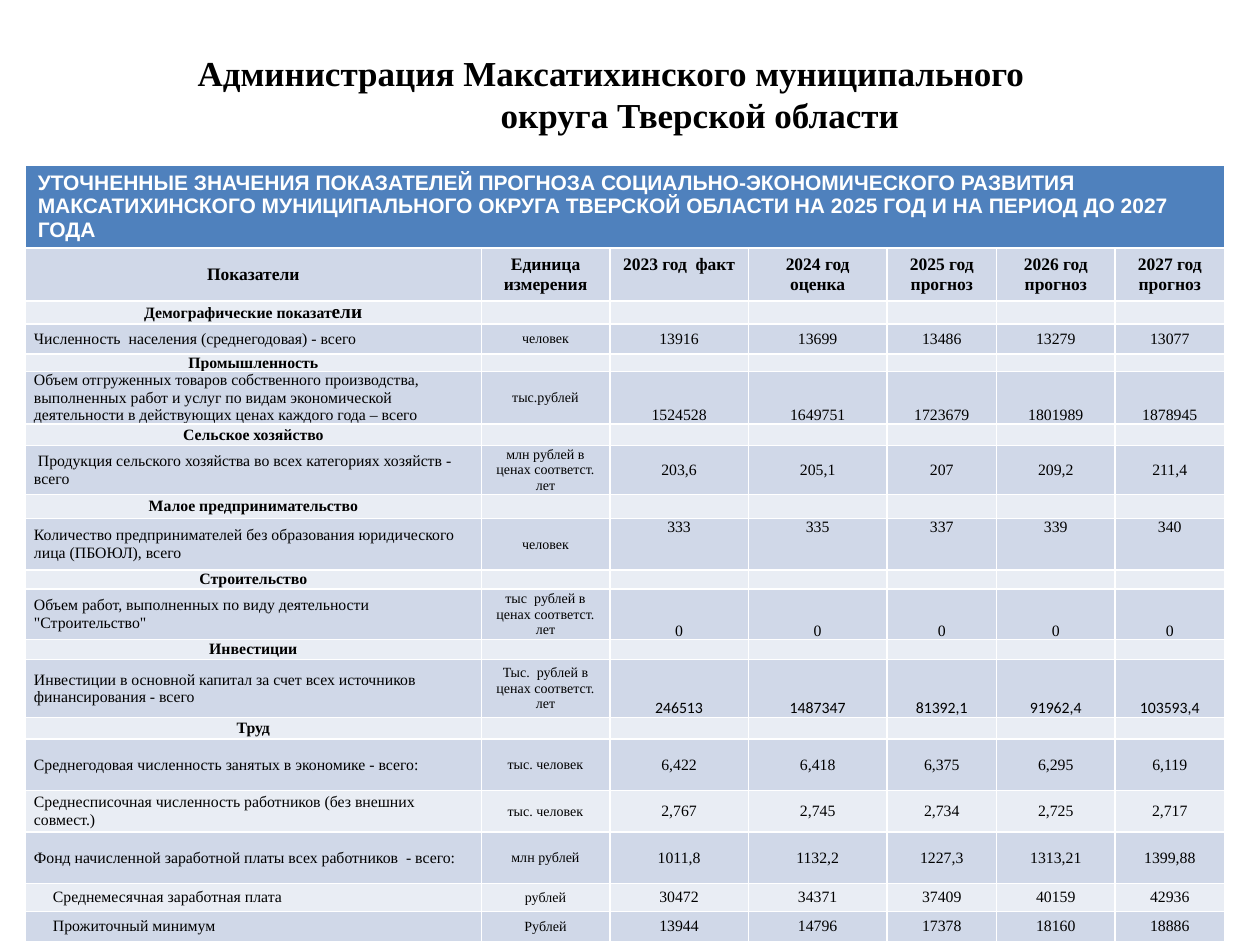
import pptx
import pptx.dml.color
import pptx.enum.text
import pptx.oxml.ns
import pptx.util
from lxml import etree

Inches = pptx.util.Inches
RGBColor = pptx.dml.color.RGBColor
ALIGN = pptx.enum.text.PP_ALIGN
ANCHOR = pptx.enum.text.MSO_ANCHOR

BLACK = RGBColor(0x00, 0x00, 0x00)
WHITE = RGBColor(0xFF, 0xFF, 0xFF)
HEADING_BLUE = RGBColor(0x4F, 0x81, 0xBD)
BAND_DARK = RGBColor(0xD0, 0xD8, 0xE8)
BAND_LIGHT = RGBColor(0xE9, 0xED, 0xF4)
SERIF = "Times New Roman"

COLUMN_WIDTHS = [3.62, 1.02, 1.1, 1.1, 0.87, 0.94, 0.87]
TABLE_HEADING = (
    "УТОЧНЕННЫЕ ЗНАЧЕНИЯ ПОКАЗАТЕЛЕЙ ПРОГНОЗА СОЦИАЛЬНО-ЭКОНОМИЧЕСКОГО РАЗВИТИЯ "
    "МАКСАТИХИНСКОГО МУНИЦИПАЛЬНОГО ОКРУГА ТВЕРСКОЙ ОБЛАСТИ НА 2025 ГОД И НА ПЕРИОД ДО 2027 ГОДА"
)
COLUMN_NAMES = [
    "Показатели", "Единица измерения", "2023 год  факт", "2024 год оценка",
    "2025 год прогноз", "2026 год прогноз", "2027 год прогноз",
]
HEADING_HEIGHT = 0.41
COLUMN_NAMES_HEIGHT = 0.42

# SECTION rows hold a height and a name; the others add unit, values and format.
ROWS = [
    (0.18, "Демографические показатели"),
    (0.24, "Численность  населения (среднегодовая) - всего", "человек",
     "13916 13699 13486 13279 13077", {}),
    (0.14, "Промышленность"),
    (0.41, "Объем отгруженных товаров собственного производства, выполненных работ и услуг "
     "по видам экономической деятельности в действующих ценах каждого года – всего", "тыс.рублей",
     "1524528 1649751 1723679 1801989 1878945", {"anchor": ANCHOR.BOTTOM}),
    (0.17, "Сельское хозяйство"),
    (0.39, " Продукция сельского хозяйства во всех категориях хозяйств - всего",
     "млн рублей в ценах соответст. лет", "203,6 205,1 207 209,2 211,4", {}),
    (0.19, "Малое предпринимательство"),
    (0.41, "Количество предпринимателей без образования юридического лица (ПБОЮЛ), всего",
     "человек", "333 335 337 339 340", {"anchor": ANCHOR.TOP}),
    (0.15, "Строительство"),
    (0.4, "Объем работ, выполненных по виду деятельности \"Строительство\"",
     "тыс  рублей в ценах соответст. лет", "0 0 0 0 0", {"anchor": ANCHOR.BOTTOM}),
    (0.16, "Инвестиции"),
    (0.46, "Инвестиции в основной капитал за счет всех источников финансирования - всего",
     "Тыс.  рублей в ценах соответст. лет", "246513 1487347 81392,1 91962,4 103593,4",
     {"anchor": ANCHOR.BOTTOM, "font": "Calibri"}),
    (0.17, "Труд"),
    (0.41, "Среднегодовая численность занятых в экономике - всего:", "тыс. человек",
     "6,422 6,418 6,375 6,295 6,119", {}),
    (0.33, "Среднесписочная численность работников (без внешних совмест.)", "тыс. человек",
     "2,767 2,745 2,734 2,725 2,717", {}),
    (0.41, "Фонд начисленной заработной платы всех работников  - всего:", "млн рублей",
     "1011,8 1132,2 1227,3 1313,21 1399,88", {}),
    (0.22, "Среднемесячная заработная плата", "рублей",
     "30472 34371 37409 40159 42936", {"indent": 0.15}),
    (0.24, "Прожиточный минимум", "Рублей",
     "13944 14796 17378 18160 18886", {"indent": 0.15}),
]


def write_text(paragraph, text, size=9, font=SERIF, color=BLACK, bold=False, align=ALIGN.CENTER):
    """Add a formatted run to a paragraph."""
    paragraph.alignment = align
    run = paragraph.add_run()
    run.text = text
    run.font.size = pptx.util.Pt(size)
    run.font.name = font
    run.font.bold = bold
    run.font.color.rgb = color


def paint_cell(cell, color):
    """Fill a cell with one colour."""
    cell.fill.solid()
    cell.fill.fore_color.rgb = color


def fill_cell(cell, text, anchor=ANCHOR.MIDDLE, indent=0, **text_format):
    """Write a body cell with narrow margins."""
    cell.margin_left = Inches(0.07 + indent)
    cell.margin_right = Inches(0.07)
    cell.margin_top = cell.margin_bottom = 0
    cell.vertical_anchor = anchor
    write_text(cell.text_frame.paragraphs[0], text, **text_format)


def shrink_empty_cell(cell):
    """Keep an empty cell from stretching its row."""
    cell.margin_top = cell.margin_bottom = 0
    paragraph = cell.text_frame.paragraphs[0]
    etree.SubElement(paragraph._p, pptx.oxml.ns.qn("a:endParaRPr"), sz="800")


def add_title(slide):
    """Place the two-line title."""
    title = slide.shapes.title
    title.left, title.top, title.width, title.height = map(Inches, (0.5, 0.3, 9, 1.25))
    frame = title.text_frame
    frame.vertical_anchor = ANCHOR.MIDDLE
    frame.margin_right = Inches(0.4)
    frame.margin_bottom = Inches(0.42)
    first = frame.paragraphs[0]
    second = frame.add_paragraph()
    write_text(first, "Администрация Максатихинского муниципального", size=20, bold=True)
    write_text(second, "округа Тверской области", size=20, bold=True)
    second._p.get_or_add_pPr().set("marL", str(Inches(1.41)))
    for paragraph in (first, second):
        paragraph.space_before = 0


def fill_heading(table):
    """Write the merged heading and the column names."""
    heading = table.cell(0, 0)
    heading.merge(table.cell(0, len(COLUMN_WIDTHS) - 1))
    paint_cell(heading, HEADING_BLUE)
    write_text(heading.text_frame.paragraphs[0], TABLE_HEADING, size=12, font="Arial",
               color=WHITE, bold=True, align=ALIGN.LEFT)
    for column, name in enumerate(COLUMN_NAMES):
        fill_cell(table.cell(1, column), name, size=10, bold=True)
    fact_cell = table.cell(1, 2)
    fact_cell.vertical_anchor = ANCHOR.TOP
    fact_cell.margin_top = Inches(0.05)


def fill_section(table, row, name):
    """Write a section name and leave the rest of its row empty."""
    fill_cell(table.cell(row, 0), name, bold=True)
    for column in range(1, len(COLUMN_WIDTHS)):
        shrink_empty_cell(table.cell(row, column))


def fill_indicator(table, row, name, unit, values, anchor=ANCHOR.MIDDLE, font=SERIF, indent=0):
    """Write an indicator with its unit and yearly values."""
    fill_cell(table.cell(row, 0), name, indent=indent, align=ALIGN.LEFT)
    fill_cell(table.cell(row, 1), unit, size=8)
    for column, value in enumerate(values.split(), start=2):
        fill_cell(table.cell(row, column), value, anchor=anchor, font=font)


def add_forecast_table(slide):
    """Build the table of forecast indicators."""
    heights = [HEADING_HEIGHT, COLUMN_NAMES_HEIGHT] + [row[0] for row in ROWS]
    table = slide.shapes.add_table(
        len(heights), len(COLUMN_WIDTHS), Inches(0.2), Inches(1.31),
        Inches(sum(COLUMN_WIDTHS)), Inches(sum(heights))).table
    for column, width in zip(table.columns, COLUMN_WIDTHS):
        column.width = Inches(width)
    for index, height in enumerate(heights):
        table.rows[index].height = Inches(height)
        for cell in table.rows[index].cells:
            paint_cell(cell, BAND_DARK if index % 2 else BAND_LIGHT)
    fill_heading(table)
    for index, (height, name, *details) in enumerate(ROWS, start=2):
        if details:
            unit, values, options = details
            fill_indicator(table, index, name, unit, values, **options)
        else:
            fill_section(table, index, name)
    demography = table.cell(2, 0).text_frame.paragraphs[0]
    demography.runs[0].text = "Демографические показат"
    write_text(demography, "ели", size=11, bold=True)


def main():
    """Build and save the presentation."""
    presentation = pptx.Presentation()
    presentation.slide_width = Inches(10)
    presentation.slide_height = Inches(7.5)
    slide = presentation.slides.add_slide(presentation.slide_layouts[5])
    add_title(slide)
    add_forecast_table(slide)
    presentation.save("out.pptx")


if __name__ == "__main__":
    main()
